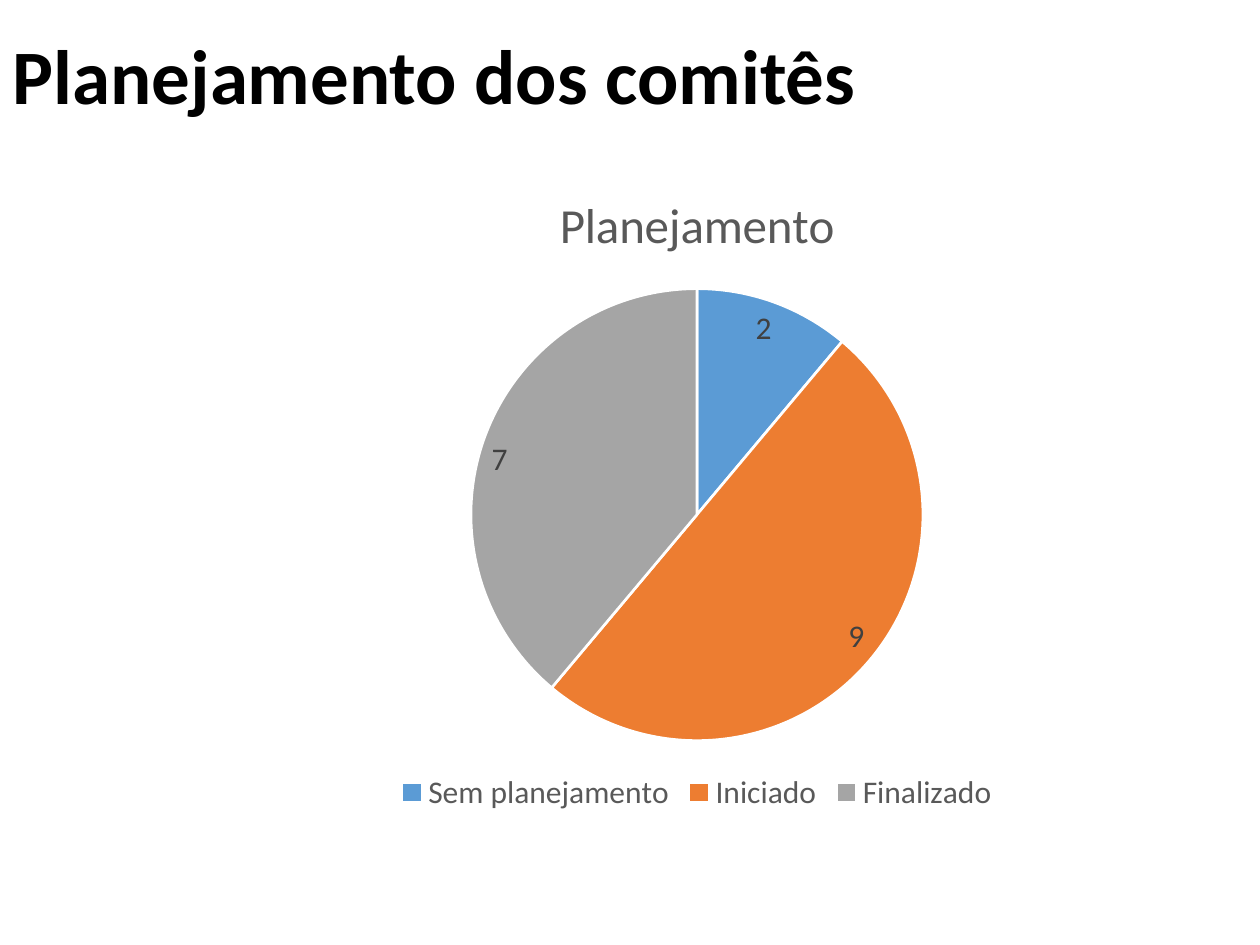
"""Build the committee planning slide with a pie chart of planning status."""
import pptx
import pptx.chart.data
import pptx.dml.color
import pptx.enum.chart
import pptx.enum.text
import pptx.util

PX = 914400 // 126
THEME = {
    "font": "Calibri",
    "title": {"size": 44, "color": "000000", "bold": True},
    "chart": {"size": 18, "color": "000000", "bold": False},
    "chart_title": {"size": 28, "color": "595959", "bold": False},
    "legend": {"size": 18, "color": "595959", "bold": False},
    "label": {"size": 18, "color": "404040", "bold": False},
    "white": "FFFFFF",
}
STATUSES = [
    ("Sem planejamento", 2, "5B9BD5"),
    ("Iniciado", 9, "ED7D31"),
    ("Finalizado", 7, "A5A5A5"),
]


def rgb(value):
    return pptx.dml.color.RGBColor.from_string(value)


def format_font(font, role):
    style = THEME[role]
    values = {
        "name": THEME["font"],
        "size": pptx.util.Pt(style["size"]),
        "bold": style["bold"],
    }
    for name, value in values.items():
        setattr(font, name, value)
    font.color.rgb = rgb(style["color"])


presentation = pptx.Presentation()
presentation.slide_width = 1260 * PX
presentation.slide_height = 945 * PX
slide = presentation.slides.add_slide(presentation.slide_layouts.get_by_name("Title Only"))
slide.background.fill.solid()
slide.background.fill.fore_color.rgb = rgb(THEME["white"])

title = slide.shapes.title
title_place = {"left": 0, "top": 32, "width": 1086, "height": 183}
for name, value in title_place.items():
    setattr(title, name, value * PX)
title_frame = title.text_frame
frame_format = {
    "text": "Planejamento dos comitês",
    "word_wrap": True,
    "auto_size": pptx.enum.text.MSO_AUTO_SIZE.NONE,
    "vertical_anchor": pptx.enum.text.MSO_ANCHOR.TOP,
}
for name, value in frame_format.items():
    setattr(title_frame, name, value)
paragraph = title_frame.paragraphs[0]
paragraph.alignment = pptx.enum.text.PP_ALIGN.LEFT
paragraph.line_spacing = 0.9
format_font(paragraph.runs[0].font, "title")

categories, values, colors = zip(*STATUSES)
chart_data = pptx.chart.data.CategoryChartData()
chart_data.categories = categories
chart_data.add_series("Planejamento", values)
chart = slide.shapes.add_chart(
    pptx.enum.chart.XL_CHART_TYPE.PIE,
    220 * PX, 163 * PX, 954 * PX, 655 * PX, chart_data,
).chart
format_font(chart.font, "chart")

chart.has_title = True
chart.chart_title.include_in_layout = False
chart.chart_title.text_frame.text = "Planejamento"
format_font(chart.chart_title.text_frame.paragraphs[0].runs[0].font, "chart_title")

chart.has_legend = True
legend_format = {
    "position": pptx.enum.chart.XL_LEGEND_POSITION.BOTTOM,
    "include_in_layout": False,
}
for name, value in legend_format.items():
    setattr(chart.legend, name, value)
format_font(chart.legend.font, "legend")

plot = chart.plots[0]
plot.vary_by_categories = True
plot.has_data_labels = True
label_format = {
    "show_value": True,
    "show_percentage": False,
    "position": pptx.enum.chart.XL_LABEL_POSITION.INSIDE_END,
}
for name, value in label_format.items():
    setattr(plot.data_labels, name, value)
format_font(plot.data_labels.font, "label")

for index, color in enumerate(colors):
    slice_format = plot.series[0].points[index].format
    slice_format.fill.solid()
    slice_format.fill.fore_color.rgb = rgb(color)
    slice_format.line.color.rgb = rgb(THEME["white"])
    slice_format.line.width = pptx.util.Pt(1.5)

presentation.save("out.pptx")
